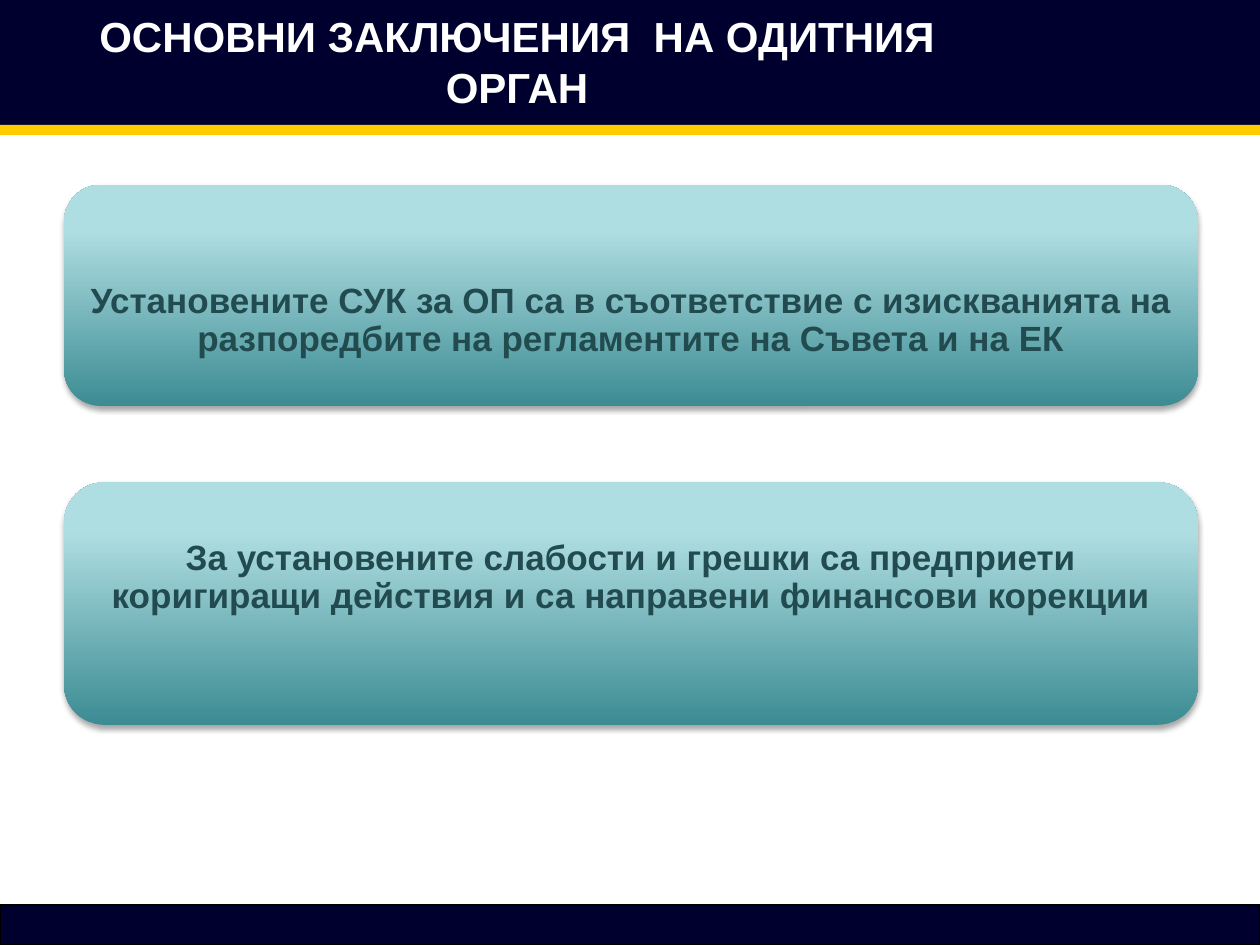
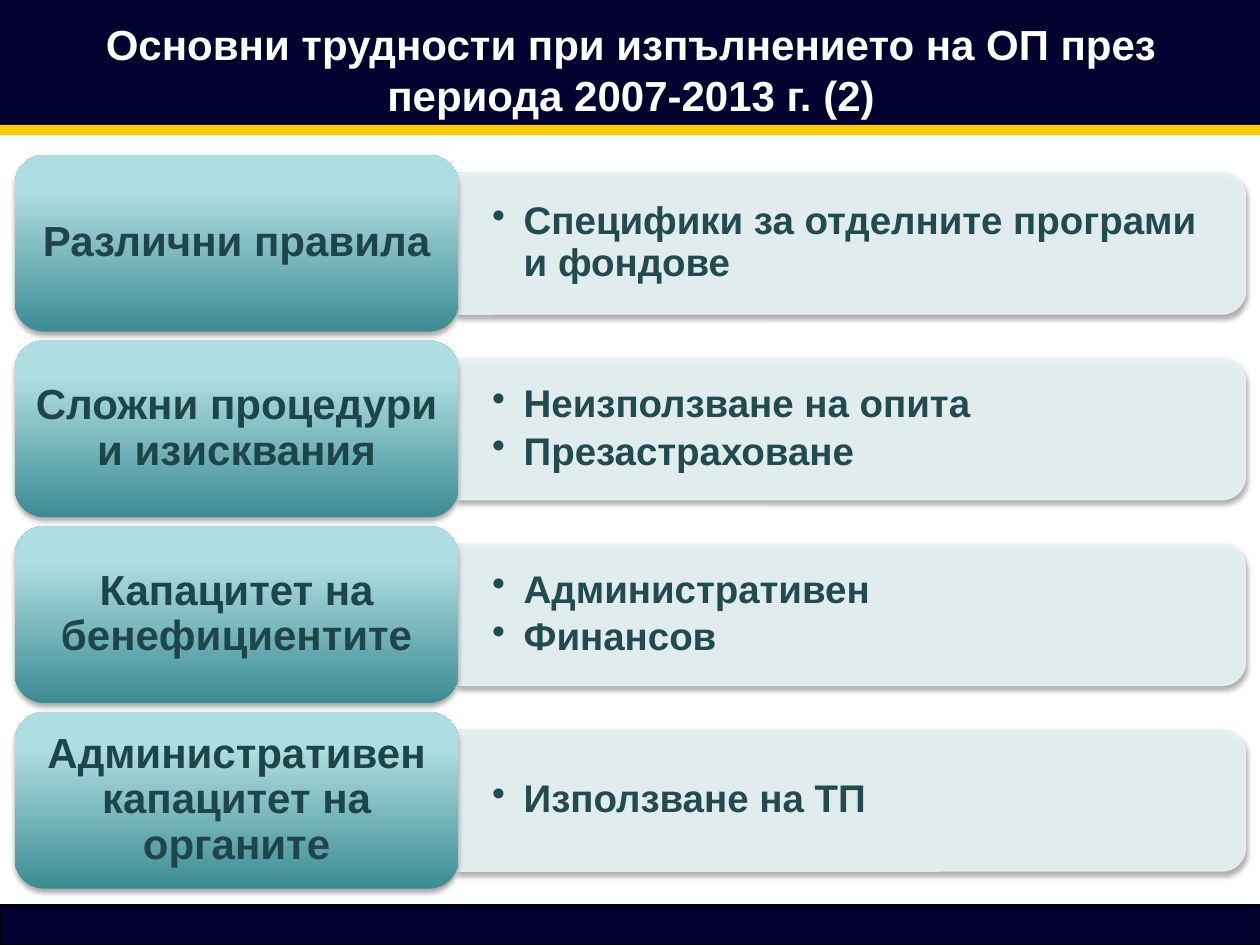
"""Build two slides on audit conclusions and programme difficulties."""
from dataclasses import dataclass

import pptx
import pptx.dml.color
import pptx.enum.shapes
import pptx.enum.text
import pptx.oxml
import pptx.oxml.ns
import pptx.util
from pptx.shapes.autoshape import Shape
from pptx.slide import Slide

Pt = pptx.util.Pt
SHAPES = pptx.enum.shapes.MSO_SHAPE
ALIGN = pptx.enum.text.PP_ALIGN

FONT = "Arial"
WIDTH, HEIGHT = 720, 540
NAVY, GOLD, BLACK, WHITE = "00002E", "FFCC00", "000000", "FFFFFF"
TEAL_TEXT, LABEL_TEXT, PANEL_FILL = "224B50", "1E4649", "E7F3F4"
TEAL_STOPS = ((0, "3C8C93"), (80, "AFDEE2"), (100, "AFE0E4"))

HEADER_HEIGHT, STRIPE_HEIGHT, FOOTER_HEIGHT = 71.4, 5.7, 22.9
TITLE_HEIGHT = 61.2
CARD_LEFT, CARD_WIDTH = 36.6, 648
ROW_TOP, ROW_PITCH = 88.5, 106.1
LABEL_LEFT, LABEL_WIDTH, LABEL_HEIGHT = 8.5, 253.4, 101
PANEL_LEFT, PANEL_WIDTH, PANEL_HEIGHT = 261.7, 450, 81
PANEL_TEXT_WIDTH, BULLET_INDENT = 445.7, 18


@dataclass(frozen=True)
class Box:
    """A rectangle in points."""
    left: float
    top: float
    width: float
    height: float

    def lengths(self) -> tuple:
        """Return the four lengths for a shape call."""
        return Pt(self.left), Pt(self.top), Pt(self.width), Pt(self.height)


@dataclass(frozen=True)
class TextStyle:
    """The look of a block of text."""
    size: float
    colour: str
    line_spacing: float = 0.9
    space_after: float = 0
    alignment: ALIGN = ALIGN.CENTER
    bulleted: bool = False


@dataclass(frozen=True)
class Insets:
    """The margins between a shape and its text."""
    left: float = 6
    top: float = 3.6
    right: float = 6
    bottom: float = 3.6


@dataclass(frozen=True)
class Conclusion:
    """A card with one audit conclusion."""
    text: str
    top: float
    height: float
    insets: Insets


@dataclass(frozen=True)
class Difficulty:
    """A row with a labelled difficulty and its details."""
    label: str
    details: tuple[str, ...]


TITLE_STYLE = TextStyle(24, WHITE, line_spacing=1)
CARD_STYLE = TextStyle(20, TEAL_TEXT)
LABEL_STYLE = TextStyle(24, LABEL_TEXT)
DETAIL_STYLE = TextStyle(22, TEAL_TEXT, space_after=3.3,
                         alignment=ALIGN.LEFT, bulleted=True)
DETAIL_INSETS = Insets(19.6, 9.8, 19.6, 9.8)
TITLE_INSETS = Insets(7.2, 3.6, 7.2, 3.6)

CONCLUSIONS = (
    Conclusion("Установените СУК за ОП са в съответствие с изискванията на "
               "разпоредбите на регламентите на Съвета и на ЕК",
               105.6, 126.4, Insets(top=33)),
    Conclusion("За установените слабости и грешки са предприети коригиращи "
               "действия и са направени финансови корекции",
               275.6, 138.6, Insets(bottom=33)),
)
DIFFICULTIES = (
    Difficulty("Различни правила",
               ("Специфики за отделните програми и фондове",)),
    Difficulty("Сложни процедури и изисквания",
               ("Неизползване на опита", "Презастраховане")),
    Difficulty("Капацитет на бенефициентите", ("Административен", "Финансов")),
    Difficulty("Административен капацитет на органите", ("Използване на ТП",)),
)


def rgb(colour: str) -> pptx.dml.color.RGBColor:
    """Turn a hex string into a colour."""
    return pptx.dml.color.RGBColor.from_string(colour)


def element(markup: str):
    """Parse one DrawingML element written without its namespace."""
    namespace = pptx.oxml.ns.nsdecls("a")
    tag, rest = markup.split(" ", 1)
    return pptx.oxml.parse_xml(f"{tag} {namespace} {rest}")


def write(shape: Shape, texts: tuple[str, ...], style: TextStyle,
          insets: Insets) -> None:
    """Fill a shape with vertically centred paragraphs."""
    frame = shape.text_frame
    frame.word_wrap = True
    frame.vertical_anchor = pptx.enum.text.MSO_ANCHOR.MIDDLE
    frame.margin_left, frame.margin_right = Pt(insets.left), Pt(insets.right)
    frame.margin_top, frame.margin_bottom = Pt(insets.top), Pt(insets.bottom)
    frame.text = "\n".join(texts)
    for paragraph in frame.paragraphs:
        paragraph.alignment = style.alignment
        paragraph.line_spacing = style.line_spacing
        paragraph.space_after = Pt(style.space_after)
        if style.bulleted:
            properties = paragraph._p.get_or_add_pPr()
            properties.set("marL", str(Pt(BULLET_INDENT)))
            properties.set("indent", str(-Pt(BULLET_INDENT)))
            properties.append(element('<a:buChar char="•"/>'))
        paragraph.font.name = FONT
        paragraph.font.size = Pt(style.size)
        paragraph.font.bold = True
        paragraph.font.color.rgb = rgb(style.colour)


def add_text(slide: Slide, box: Box, texts: tuple[str, ...],
             style: TextStyle, insets: Insets) -> None:
    """Add a text box."""
    write(slide.shapes.add_textbox(*box.lengths()), texts, style, insets)


def add_band(slide: Slide, top: float, height: float, colour: str) -> Shape:
    """Add a full-width band."""
    band = slide.shapes.add_shape(SHAPES.RECTANGLE,
                                  *Box(0, top, WIDTH, height).lengths())
    band.shadow.inherit = False
    band.fill.solid()
    band.fill.fore_color.rgb = rgb(colour)
    band.line.fill.background()
    return band


def add_soft_shadow(shape: Shape) -> None:
    """Give a shape a faint shadow just below it."""
    shape.shadow.inherit = False
    effects = shape._element.spPr.find(pptx.oxml.ns.qn("a:effectLst"))
    effects.append(element(
        f'<a:outerShdw blurRad="{Pt(3.1)}" dist="{Pt(1.8)}" dir="5400000" '
        f'rotWithShape="0"><a:srgbClr val="{BLACK}"><a:alpha val="35000"/>'
        '</a:srgbClr></a:outerShdw>'))


def add_teal_card(slide: Slide, box: Box, text: str, style: TextStyle,
                  insets: Insets) -> None:
    """Add a rounded card with a teal gradient."""
    card = slide.shapes.add_shape(SHAPES.ROUNDED_RECTANGLE, *box.lengths())
    card.fill.gradient()
    card.fill.gradient_angle = 90
    stops = card._element.spPr.find(
        f".//{pptx.oxml.ns.qn('a:gsLst')}")
    stops[:] = [
        element(f'<a:gs pos="{position * 1000}"><a:srgbClr val="{colour}"/></a:gs>')
        for position, colour in TEAL_STOPS]
    card.line.fill.background()
    add_soft_shadow(card)
    write(card, (text,), style, insets)


def add_detail_panel(slide: Slide, top: float, details: tuple[str, ...]) -> None:
    """Add a pale panel, rounded on the right, with bulleted details."""
    offset = (PANEL_WIDTH - PANEL_HEIGHT) / 2
    turned = Box(PANEL_LEFT + offset, top - offset, PANEL_HEIGHT, PANEL_WIDTH)
    panel = slide.shapes.add_shape(SHAPES.ROUND_2_SAME_RECTANGLE,
                                   *turned.lengths())
    panel.rotation = 90
    panel.fill.solid()
    panel.fill.fore_color.rgb = rgb(PANEL_FILL)
    panel.line.color.rgb = rgb(PANEL_FILL)
    panel.line.width = Pt(0.75)
    for colour in panel._element.spPr.iter(pptx.oxml.ns.qn("a:srgbClr")):
        colour.append(element('<a:alpha val="90000"/>'))
    add_soft_shadow(panel)
    add_text(slide, Box(PANEL_LEFT, top, PANEL_TEXT_WIDTH, PANEL_HEIGHT),
             details, DETAIL_STYLE, DETAIL_INSETS)


def add_framed_slide(presentation, title: str, title_left: float,
                     title_top: float, title_width: float) -> Slide:
    """Add a slide with the shared bands and a title."""
    slide = presentation.slides.add_slide(presentation.slide_layouts[6])
    add_band(slide, 0, HEADER_HEIGHT, NAVY)
    add_band(slide, HEADER_HEIGHT, STRIPE_HEIGHT, GOLD)
    footer = add_band(slide, HEIGHT - FOOTER_HEIGHT, FOOTER_HEIGHT, NAVY)
    footer.line.color.rgb = rgb(BLACK)
    footer.line.width = Pt(0.75)
    add_text(slide, Box(title_left, title_top, title_width, TITLE_HEIGHT),
             (title,), TITLE_STYLE, TITLE_INSETS)
    return slide


def build_conclusions(presentation) -> None:
    """Build the slide with the audit conclusions."""
    slide = add_framed_slide(presentation,
                             "ОСНОВНИ ЗАКЛЮЧЕНИЯ  НА ОДИТНИЯ ОРГАН",
                             8.6, 4.3, 573.8)
    for conclusion in CONCLUSIONS:
        box = Box(CARD_LEFT, conclusion.top, CARD_WIDTH, conclusion.height)
        add_teal_card(slide, box, conclusion.text, CARD_STYLE,
                      conclusion.insets)


def build_difficulties(presentation) -> None:
    """Build the slide with the main difficulties."""
    slide = add_framed_slide(presentation,
                             "Основни трудности при изпълнението на ОП през "
                             "периода 2007-2013 г. (2)",
                             CARD_LEFT, 9, CARD_WIDTH)
    for index, difficulty in enumerate(DIFFICULTIES):
        top = ROW_TOP + index * ROW_PITCH
        add_detail_panel(slide, top + (LABEL_HEIGHT - PANEL_HEIGHT) / 2,
                         difficulty.details)
        add_teal_card(slide, Box(LABEL_LEFT, top, LABEL_WIDTH, LABEL_HEIGHT),
                      difficulty.label, LABEL_STYLE, Insets())


def main() -> None:
    """Build and save the presentation."""
    presentation = pptx.Presentation()
    presentation.slide_width, presentation.slide_height = Pt(WIDTH), Pt(HEIGHT)
    build_conclusions(presentation)
    build_difficulties(presentation)
    presentation.save("out.pptx")


if __name__ == "__main__":
    main()
